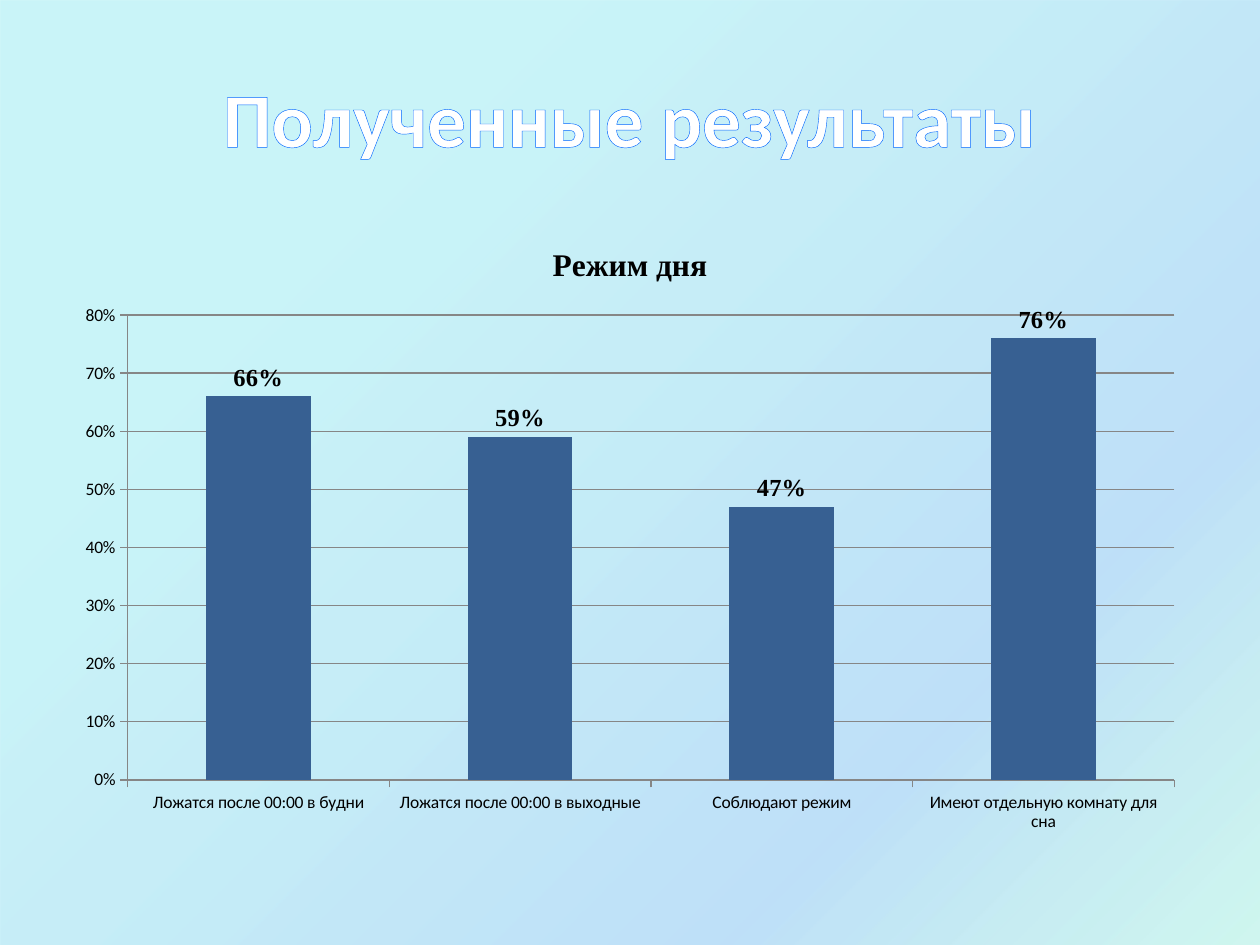
from lxml.etree import SubElement
from pptx import Presentation
from pptx.chart.data import CategoryChartData
from pptx.dml.color import RGBColor
from pptx.enum.chart import XL_CHART_TYPE, XL_LABEL_POSITION, XL_TICK_MARK
from pptx.enum.shapes import MSO_SHAPE
from pptx.enum.text import MSO_ANCHOR, PP_ALIGN
from pptx.oxml import parse_xml
from pptx.oxml.ns import nsdecls, qn
from pptx.util import Inches, Pt

BACKGROUND_STOPS = [(25, "21D6E0", 23), (75, "0087E6", 25), (100, "03D4A8", 18), (100, "005CBF", 26)]
ROUTINE = {
    "Ложатся после 00:00 в будни": 0.66,
    "Ложатся после 00:00 в выходные": 0.59,
    "Соблюдают режим": 0.47,
    "Имеют отдельную комнату для сна": 0.76,
}


def color(value):
    return RGBColor.from_string(value)


class SlideBuilder:
    body_font = "Calibri"
    heading_font = "Times New Roman"
    text_color = "000000"
    bar_color = "376092"
    line_color = "868686"

    def __init__(self, slide):
        self.slide = slide

    def style_font(self, font, name, size, bold=False, fill=text_color):
        font.name = name
        font.size = Pt(size)
        font.bold = bold
        font.color.rgb = color(fill)

    def style_line(self, line):
        line.color.rgb = color(self.line_color)
        line.width = Pt(0.75)

    def background(self, stops, angle, box):
        """Draw a translucent gradient behind everything; stops are (position, colour, opacity)."""
        shape = self.slide.shapes.add_shape(MSO_SHAPE.RECTANGLE, *map(Inches, box))
        shape.shadow.inherit = False
        shape.line.fill.background()
        shape.fill.background()
        stop_xml = "".join(
            f'<a:gs pos="{position * 1000}"><a:srgbClr val="{value}">'
            f'<a:alpha val="{opacity * 1000}"/></a:srgbClr></a:gs>'
            for position, value, opacity in stops
        )
        gradient = parse_xml(
            f'<a:gradFill {nsdecls("a")}><a:gsLst>{stop_xml}</a:gsLst>'
            f'<a:lin ang="{angle * 60000}" scaled="0"/></a:gradFill>'
        )
        properties = shape._element.spPr
        properties.replace(properties.find(qn("a:noFill")), gradient)
        self.slide.shapes._spTree.insert(2, shape._element)

    def title(self, text, box, outline):
        shape = self.slide.shapes.title
        shape.left, shape.top, shape.width, shape.height = map(Inches, box)
        text_frame = shape.text_frame
        text_frame.text = text
        text_frame.vertical_anchor = MSO_ANCHOR.MIDDLE
        paragraph = text_frame.paragraphs[0]
        paragraph.alignment = PP_ALIGN.CENTER
        run = paragraph.runs[0]
        self.style_font(run.font, self.body_font, 44, True, "FFFFFF")
        line = parse_xml(f'<a:ln {nsdecls("a")} w="{Pt(1.45)}"/>')
        fill = SubElement(line, qn("a:solidFill"))
        SubElement(fill, qn("a:srgbClr")).set("val", outline)
        run._r.get_or_add_rPr().insert(0, line)

    def column_chart(self, title, values, box):
        data = CategoryChartData(number_format="0%")
        data.categories = list(values)
        data.add_series("Series 1", list(values.values()))
        chart = self.slide.shapes.add_chart(
            XL_CHART_TYPE.COLUMN_CLUSTERED, *map(Inches, box), data
        ).chart
        self.style_font(chart.font, self.body_font, 10)
        chart.has_legend = False
        chart.has_title = True
        chart.chart_title.include_in_layout = False
        text_frame = chart.chart_title.text_frame
        text_frame.text = title
        self.style_font(text_frame.paragraphs[0].runs[0].font, self.heading_font, 18, True)

        for axis in (chart.category_axis, chart.value_axis):
            axis.major_tick_mark = XL_TICK_MARK.OUTSIDE
            self.style_line(axis.format.line)
        axis = chart.value_axis
        axis.minimum_scale, axis.maximum_scale, axis.major_unit = 0, 0.8, 0.1
        axis.tick_labels.number_format = "0%"
        axis.tick_labels.number_format_is_linked = False
        axis.has_major_gridlines = True
        self.style_line(axis.major_gridlines.format.line)

        plot = chart.plots[0]
        plot.gap_width = 150
        plot.vary_by_categories = False
        series = plot.series[0]
        series.format.fill.solid()
        series.format.fill.fore_color.rgb = color(self.bar_color)
        labels = series.data_labels
        labels.show_value = True
        labels.number_format = "0%"
        labels.number_format_is_linked = False
        labels.position = XL_LABEL_POSITION.OUTSIDE_END
        self.style_font(labels.font, self.heading_font, 14, True)


def main():
    presentation = Presentation()
    presentation.slide_width = Inches(10)
    presentation.slide_height = Inches(7.5)
    title_only = presentation.slide_layouts[5]
    builder = SlideBuilder(presentation.slides.add_slide(title_only))
    builder.background(BACKGROUND_STOPS, 45, (0, 0, 10, 7.67))
    builder.title("Полученные результаты", (0.5, 0.3, 9, 1.25), "0066FF")
    builder.column_chart("Режим дня", ROUTINE, (0.5, 1.75, 9, 4.95))
    presentation.save("out.pptx")


if __name__ == "__main__":
    main()
